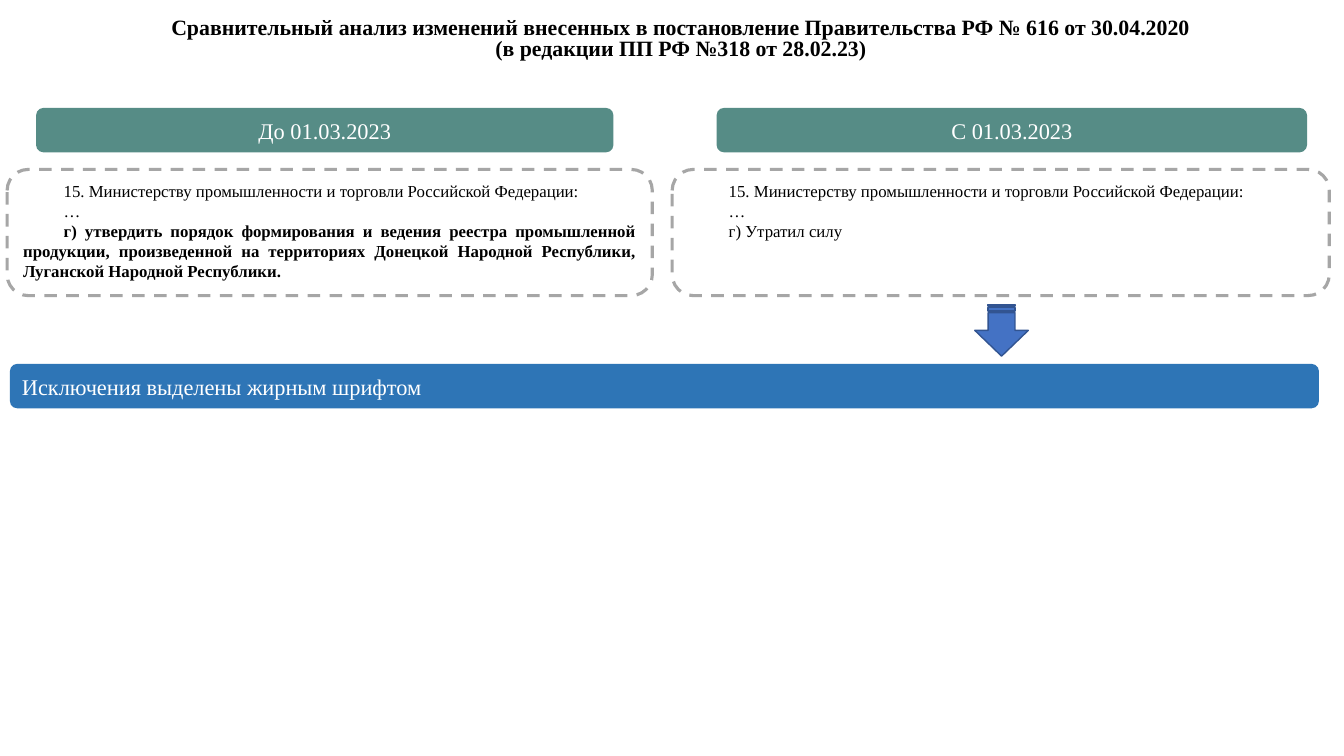
from dataclasses import dataclass

from pptx import Presentation
from pptx.dml.color import RGBColor
from pptx.enum.dml import MSO_LINE
from pptx.enum.shapes import MSO_SHAPE
from pptx.enum.text import MSO_ANCHOR, PP_ALIGN
from pptx.shapes.autoshape import Shape
from pptx.slide import Slide
from pptx.text.text import _Paragraph
from pptx.util import Cm, Pt

COLORS = {
    "text": "000000",
    "light_text": "FFFFFF",
    "header": "568C86",
    "note": "2E75B6",
    "dash": "A6A6A6",
    "arrow": "4472C4",
    "arrow_line": "325491",
}
FONT = "Times New Roman"
MINISTRY = "15. Министерству промышленности и торговли Российской Федерации:"
BANNER_HEIGHT = 1.12
HEADER_TOP = 2.72
CLAUSE_TOP, CLAUSE_HEIGHT = 4.27, 3.18


@dataclass(frozen=True)
class Banner:
    left: float
    top: float
    width: float
    text: str
    color: str = "header"
    alignment: PP_ALIGN = PP_ALIGN.CENTER
    line_spacing: float = 1.0


@dataclass(frozen=True)
class Clause:
    left: float
    width: float
    change: str
    bold_change: bool = False


BANNERS = [
    Banner(0.91, HEADER_TOP, 14.55, "До 01.03.2023"),
    Banner(18.06, HEADER_TOP, 14.88, "С 01.03.2023"),
    Banner(0.25, 9.17, 32.99, "Исключения выделены жирным шрифтом",
           "note", PP_ALIGN.JUSTIFY, 1.07),
]
CLAUSES = [
    Clause(0.18, 16.26,
           "г) утвердить порядок формирования и ведения реестра промышленной "
           "продукции, произведенной на территориях Донецкой Народной "
           "Республики, Луганской Народной Республики.", True),
    Clause(16.94, 16.56, "г) Утратил силу"),
]
TITLE_LINES = [
    "Сравнительный анализ изменений внесенных в постановление "
    "Правительства РФ № 616 от 30.04.2020",
    "(в редакции ПП РФ №318 от 28.02.23)",
]


def color(name: str) -> RGBColor:
    return RGBColor.from_string(COLORS[name])


def style(paragraph: _Paragraph, size: float, color_name: str,
          alignment: PP_ALIGN, bold: bool = False) -> None:
    paragraph.alignment = alignment
    paragraph.font.name = FONT
    paragraph.font.size = Pt(size)
    paragraph.font.bold = bold
    paragraph.font.color.rgb = color(color_name)


def add_rounded_box(slide: Slide, left: float, top: float,
                    width: float, height: float) -> Shape:
    shape = slide.shapes.add_shape(MSO_SHAPE.ROUNDED_RECTANGLE, Cm(left),
                                   Cm(top), Cm(width), Cm(height))
    shape.shadow.inherit = False
    return shape


def draw_banner(slide: Slide, banner: Banner) -> None:
    shape = add_rounded_box(slide, banner.left, banner.top, banner.width,
                            BANNER_HEIGHT)
    shape.fill.solid()
    shape.fill.fore_color.rgb = color(banner.color)
    shape.line.fill.background()
    shape.text_frame.text = banner.text
    shape.text_frame.vertical_anchor = MSO_ANCHOR.MIDDLE
    paragraph = shape.text_frame.paragraphs[0]
    style(paragraph, 16, "light_text", banner.alignment)
    paragraph.line_spacing = banner.line_spacing


def draw_clause(slide: Slide, clause: Clause) -> None:
    shape = add_rounded_box(slide, clause.left, CLAUSE_TOP, clause.width,
                            CLAUSE_HEIGHT)
    shape.fill.background()
    shape.line.color.rgb = color("dash")
    shape.line.width = Pt(2.25)
    shape.line.dash_style = MSO_LINE.DASH
    frame = shape.text_frame
    frame.vertical_anchor = MSO_ANCHOR.TOP
    frame.text = "\n".join([MINISTRY, "…", clause.change])
    for paragraph in frame.paragraphs:
        style(paragraph, 12, "text", PP_ALIGN.JUSTIFY)
        properties = paragraph._p.get_or_add_pPr()
        properties.set("marL", "0")
        properties.set("indent", str(Cm(1.02)))
    frame.paragraphs[-1].font.bold = clause.bold_change


def draw_arrow(slide: Slide) -> None:
    arrow = slide.shapes.add_shape(MSO_SHAPE.STRIPED_RIGHT_ARROW, Cm(24.59),
                                   Cm(7.65), Cm(1.3), Cm(1.35))
    arrow.shadow.inherit = False
    arrow.rotation = 90
    arrow.fill.solid()
    arrow.fill.fore_color.rgb = color("arrow")
    arrow.line.color.rgb = color("arrow_line")
    arrow.line.width = Pt(1)


def draw_title(slide: Slide) -> None:
    title = slide.shapes.add_textbox(Cm(1.07), Cm(0.2), Cm(32.18), Cm(2.46))
    frame = title.text_frame
    frame.word_wrap = True
    frame.margin_top = Cm(0.28)
    frame.text = "\n".join(TITLE_LINES)
    for paragraph in frame.paragraphs:
        style(paragraph, 15.6, "text", PP_ALIGN.CENTER, bold=True)
        paragraph.line_spacing = 0.8


def main() -> None:
    presentation = Presentation()
    presentation.slide_width = Cm(33.87)
    presentation.slide_height = Cm(19.05)
    slide = presentation.slides.add_slide(presentation.slide_layouts[6])
    for clause in CLAUSES:
        draw_clause(slide, clause)
    for banner in BANNERS:
        draw_banner(slide, banner)
    draw_arrow(slide)
    draw_title(slide)
    presentation.save("out.pptx")


if __name__ == "__main__":
    main()
